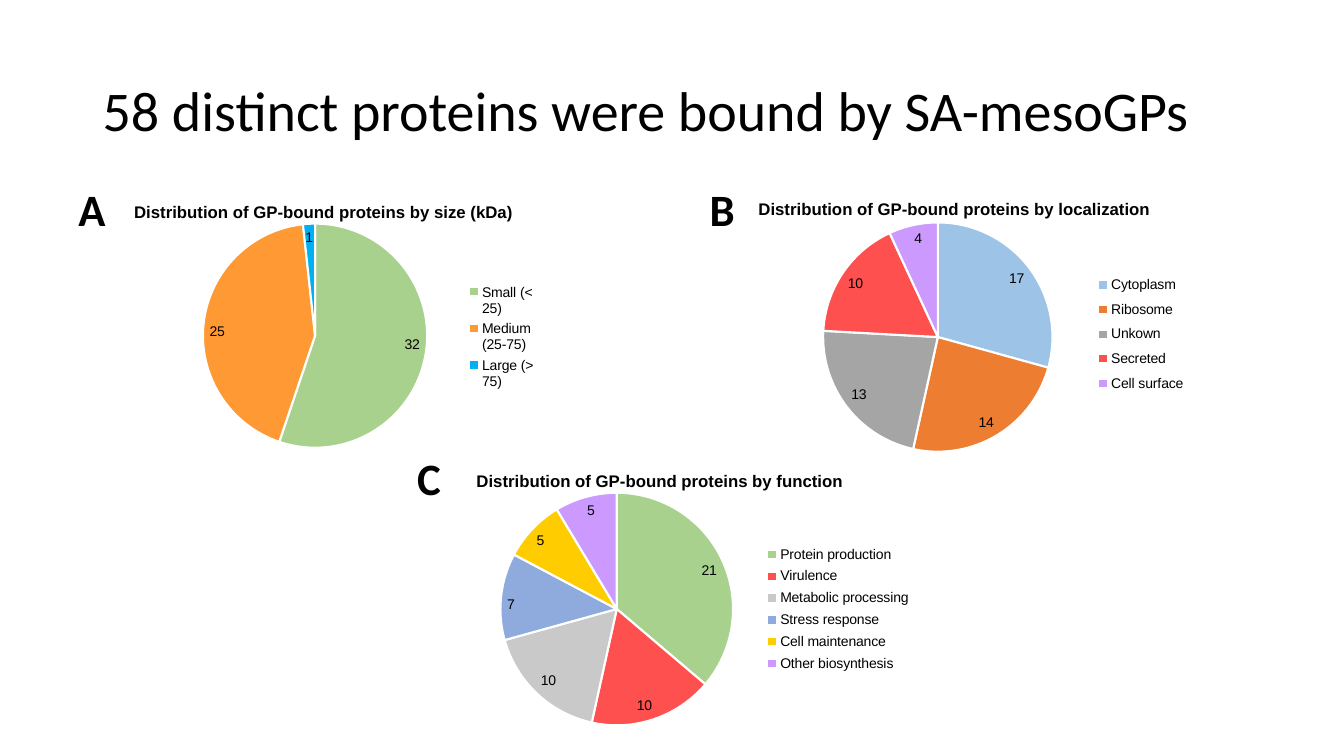
from lxml import etree
from pptx import Presentation
from pptx.chart.data import CategoryChartData
from pptx.dml.color import RGBColor
from pptx.enum.chart import XL_CHART_TYPE, XL_LABEL_POSITION, XL_LEGEND_POSITION
from pptx.enum.text import MSO_ANCHOR
from pptx.oxml.ns import qn
from pptx.util import Inches, Pt

BLACK = "000000"
WHITE = "FFFFFF"
GREEN = "A9D18E"
RED = "FF5050"
PURPLE = "CC99FF"

PANELS = [
    {
        "letter": "A", "letter_at": (0.68, 1.75), "chart_at": (0.7, 1.83, 5, 2.78),
        "title": "Distribution of GP-bound proteins by size (kDa)",
        "title_at": (0.12, 0.05),
        "plot_at": (0.26, 0.14, 0.45, 0.8),
        "legend_at": (0.78, 0.34, 0.15, 0.41),
        "slices": [
            ("Small (< 25)", 32, GREEN),
            ("Medium (25-75)", 25, "FF9933"),
            ("Large (> 75)", 1, "00B0F0"),
        ],
    },
    {
        "letter": "B", "letter_at": (6.94, 1.75), "chart_at": (6.82, 1.83, 5.17, 2.78),
        "title": "Distribution of GP-bound proteins by localization",
        "title_at": (0.13, 0.04),
        "plot_at": (0.26, 0.13, 0.44, 0.83),
        "legend_at": (0.76, 0.3, 0.22, 0.47),
        "slices": [
            ("Cytoplasm", 17, "9DC3E6"),
            ("Ribosome", 14, "ED7D31"),
            ("Unkown", 13, "A5A5A5"),
            ("Secreted", 10, RED),
            ("Cell surface", 4, PURPLE),
        ],
    },
    {
        "letter": "C", "letter_at": (4.04, 4.42), "chart_at": (3.92, 4.5, 5.17, 2.78),
        "title": "Distribution of GP-bound proteins by function",
        "title_at": (0.15, 0.05),
        "plot_at": (0.2, 0.14, 0.45, 0.83),
        "legend_at": (0.7, 0.31, 0.3, 0.49),
        "slices": [
            ("Protein production", 21, GREEN),
            ("Virulence", 10, RED),
            ("Metabolic processing", 10, "C9C9C9"),
            ("Stress response", 7, "8FAADC"),
            ("Cell maintenance", 5, "FFCC00"),
            ("Other biosynthesis", 5, PURPLE),
        ],
    },
]


def color(value):
    return RGBColor.from_string(value)


def style_font(font, size, name="Arial", bold=False):
    font.size = Pt(size)
    font.name = name
    font.bold = bold
    font.color.rgb = color(BLACK)


def add_text(slide, text, box, size, bold=False, wrap=True, anchor=MSO_ANCHOR.TOP, spacing=1.0):
    shape = slide.shapes.add_textbox(*map(Inches, box))
    frame = shape.text_frame
    frame.word_wrap = wrap
    frame.vertical_anchor = anchor
    paragraph = frame.paragraphs[0]
    paragraph.line_spacing = spacing
    run = paragraph.add_run()
    run.text = text
    style_font(run.font, size, "Calibri", bold)


def set_layout(element, position, before, inner=False):
    for previous in element.findall(qn("c:layout")):
        element.remove(previous)
    layout = etree.Element(qn("c:layout"))
    manual = etree.SubElement(layout, qn("c:manualLayout"))
    settings = [("layoutTarget", "inner")] if inner else []
    settings += [("xMode", "edge"), ("yMode", "edge")]
    settings += zip("xywh", position)
    for tag, value in settings:
        etree.SubElement(manual, qn(f"c:{tag}")).set("val", str(value))
    element.find(qn(f"c:{before}")).addprevious(layout)


def add_pie(slide, panel):
    names, values, fills = zip(*panel["slices"])
    data = CategoryChartData()
    data.categories = names
    data.add_series("Series 1", values)
    frame = slide.shapes.add_chart(XL_CHART_TYPE.PIE, *map(Inches, panel["chart_at"]), data)
    chart = frame.chart
    style_font(chart.font, 10, "Calibri")

    chart.has_title = True
    title_run = chart.chart_title.text_frame.paragraphs[0].add_run()
    title_run.text = panel["title"]
    style_font(title_run.font, 12, bold=True)
    chart.chart_title.include_in_layout = False

    chart.has_legend = True
    chart.legend.position = XL_LEGEND_POSITION.RIGHT
    chart.legend.include_in_layout = False
    style_font(chart.legend.font, 10)

    plot = chart.plots[0]
    plot.vary_by_categories = True
    plot.has_data_labels = True
    labels = plot.data_labels
    labels.show_value = True
    labels.show_percentage = False
    labels.position = XL_LABEL_POSITION.INSIDE_END
    style_font(labels.font, 10)

    for index, fill in enumerate(fills):
        point_format = plot.series[0].points[index].format
        point_format.fill.solid()
        point_format.fill.fore_color.rgb = color(fill)
        point_format.line.color.rgb = color(WHITE)
        point_format.line.width = Pt(1.5)

    plot_area = chart.element.find(".//" + qn("c:plotArea"))
    set_layout(chart.chart_title.element, panel["title_at"], "overlay") if hasattr(
        chart.chart_title, "element") else set_layout(
        chart.element.find(".//" + qn("c:title")), panel["title_at"], "overlay")
    set_layout(chart.element.find(".//" + qn("c:legend")), panel["legend_at"], "overlay")
    set_layout(plot_area, panel["plot_at"], "pieChart", inner=True)


def main():
    presentation = Presentation()
    presentation.slide_width = Inches(13.33)
    presentation.slide_height = Inches(7.5)
    slide = presentation.slides.add_slide(presentation.slide_layouts[6])
    for panel in PANELS:
        add_pie(slide, panel)
    add_text(slide, "58 distinct proteins were bound by SA-mesoGPs",
             (0.92, 0.4, 11.5, 1.45), 40, anchor=MSO_ANCHOR.MIDDLE, spacing=0.9)
    for panel in PANELS:
        add_text(slide, panel["letter"], (*panel["letter_at"], 0.46, 0.64), 32,
                 bold=True, wrap=False)
    presentation.save("out.pptx")


if __name__ == "__main__":
    main()
